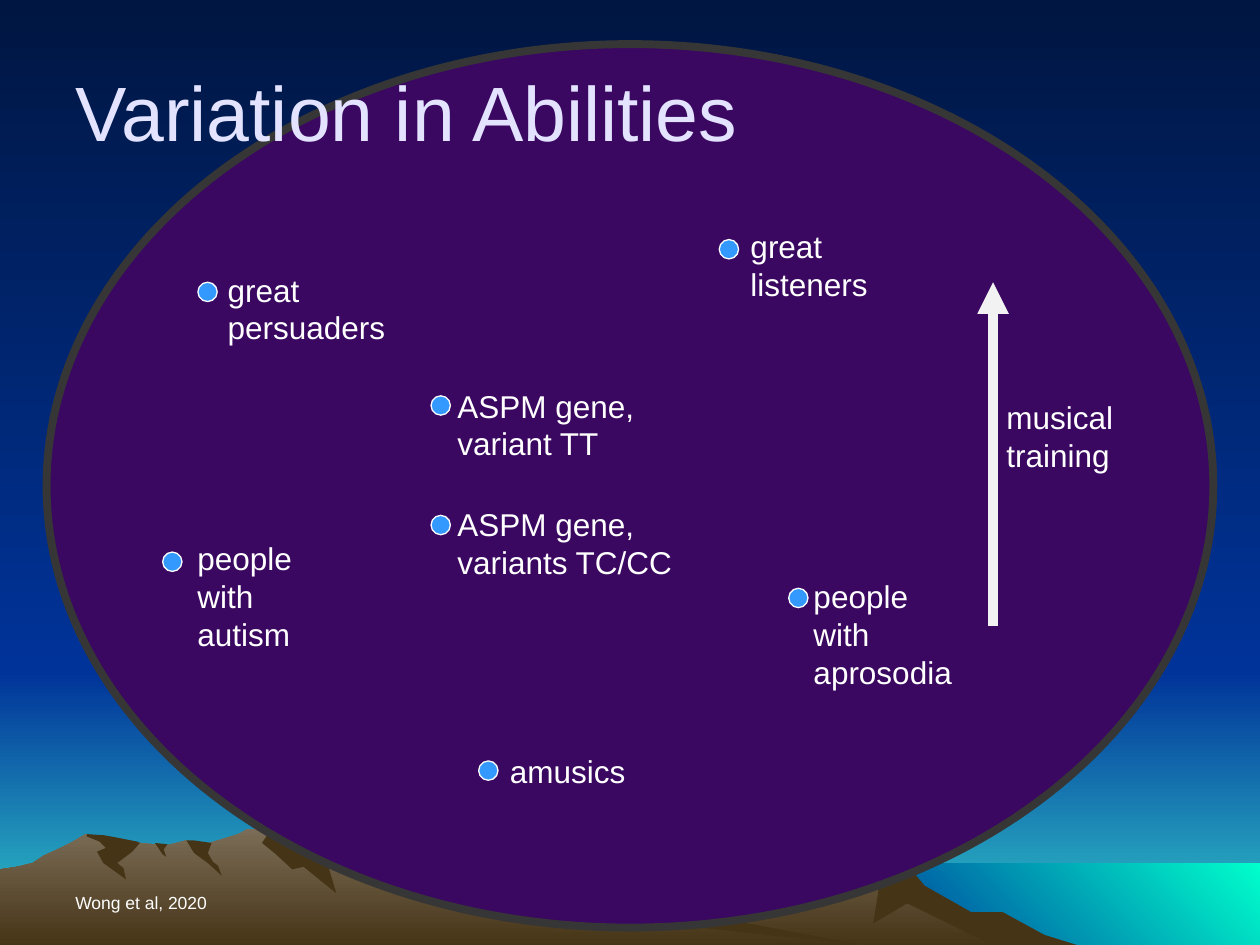
from lxml.etree import SubElement
from pptx import Presentation
from pptx.dml.color import RGBColor
from pptx.enum.shapes import MSO_CONNECTOR, MSO_SHAPE
from pptx.enum.text import MSO_ANCHOR, MSO_AUTO_SIZE, PP_ALIGN
from pptx.oxml.ns import qn
from pptx.util import Cm, Pt

COLORS = {
    "night": "001642", "blue": "003399", "haze": "33CCCC", "aqua": "00FFCC",
    "rock": "7A6C56", "shade": "463416", "oval": "3A0860", "rim": "363636",
    "dot": "3399FF", "text": "FFFFFF", "arrow": "F2F2F2", "title": "E3E3FF",
}
FONT = "Arial"
GRID = Cm(0.0254)
DOT = 0.39

PANELS = [
    ((0, 533, 1000, 750), ("blue", "haze"), 270),
    ((0, 0, 1000, 533), ("night", "blue"), 270),
    ((683, 685, 1000, 752), ("blue", "aqua"), 45),
]
RIDGES = [
    [(802, 740), (778, 727), (764, 723), (723, 698), (702, 671), (685, 660),
     (676, 666), (656, 671), (629, 671), (613, 681), (566, 697), (536, 690),
     (529, 676), (509, 669), (486, 673), (471, 658), (450, 664), (438, 671),
     (424, 672), (394, 685), (355, 698), (327, 709), (277, 739), (258, 751),
     (821, 751)],
    [(690, 751), (667, 748), (432, 712), (354, 665), (331, 663), (327, 668),
     (318, 664), (296, 676), (271, 682), (260, 676), (236, 681), (223, 663),
     (212, 658), (196, 658), (189, 662), (160, 671), (148, 667), (132, 671),
     (111, 669), (94, 671), (68, 662), (56, 669), (46, 674), (35, 679),
     (26, 685), (14, 688), (0, 690), (0, 751)],
]
SHADOWS = [
    [(796, 724), (771, 724), (734, 703), (707, 671), (685, 660), (689, 664),
     (685, 671), (691, 680), (698, 702), (693, 733), (720, 717), (792, 752),
     (858, 751), (829, 742)],
    [(212, 663), (208, 669), (219, 678), (232, 690), (241, 688), (267, 709),
     (261, 689), (271, 682), (260, 674), (245, 668), (232, 663), (213, 659)],
    [(370, 668), (354, 665), (344, 665), (339, 669), (337, 687), (348, 683),
     (353, 688), (363, 691), (374, 712), (407, 727), (472, 727), (690, 751),
     (455, 707), (427, 692), (411, 684), (386, 675)],
    [(154, 667), (168, 669), (165, 677), (169, 684), (173, 687), (176, 695),
     (165, 685), (154, 677), (148, 667)],
    [(133, 670), (130, 674), (132, 680), (129, 678), (123, 669)],
    [(109, 668), (111, 669), (105, 676), (93, 685), (98, 689), (100, 698),
     (82, 685), (77, 676), (84, 673), (79, 668), (69, 664), (69, 662),
     (83, 663), (94, 665)],
]
ABILITIES = [
    (["people with autism"], (3.73, 10.74, 2.97, 2.57), (3.28, 11.13)),
    (["amusics"], (10.03, 15.04, 3.91, 1.02), (9.65, 15.34)),
    (["ASPM gene,", "variant TT"], (8.97, 7.67, 6.25, 1.8), (8.69, 7.98)),
    (["ASPM gene,", "variants TC/CC"], (8.97, 10.06, 6.25, 1.8), (8.69, 10.39)),
    (["people with aprosodia"], (16.15, 11.51, 3.61, 2.57), (15.9, 11.86)),
    (["great", "persuaders"], (4.34, 5.33, 6.25, 1.8), (3.99, 5.69)),
    (["great", "listeners"], (14.88, 4.45, 6.25, 1.8), (14.5, 4.83)),
]


def rgb(name):
    return RGBColor.from_string(COLORS[name])


def fill_solid(fill, name):
    fill.solid()
    fill.fore_color.rgb = rgb(name)


def fill_gradient(fill, names, angle=270):
    fill.gradient()
    fill.gradient_angle = angle
    for stop, name in zip(fill.gradient_stops, names):
        stop.color.rgb = rgb(name)


def add_outline(s, points):
    builder = s.shapes.build_freeform(*points[0], scale=GRID)
    builder.add_line_segments(points[1:], close=True)
    sp = builder.convert_to_shape()
    sp.shadow.inherit = False
    sp.line.fill.background()
    return sp


def add_landscape(s):
    for (x1, y1, x2, y2), names, angle in PANELS:
        sp = add_outline(s, [(x1, y1), (x2, y1), (x2, y2), (x1, y2)])
        fill_gradient(sp.fill, names, angle)
    for points in RIDGES:
        fill_gradient(add_outline(s, points).fill, ("rock", "shade"))
    for points in SHADOWS:
        fill_solid(add_outline(s, points).fill, "shade")


def add_ellipse(s, box, fill, line, width):
    sp = s.shapes.add_shape(MSO_SHAPE.OVAL, *map(Cm, box))
    sp.shadow.inherit = False
    fill_solid(sp.fill, fill)
    sp.line.color.rgb = rgb(line)
    sp.line.width = Pt(width)


def style(p, size, color):
    p.font.name = FONT
    p.font.size = Pt(size)
    p.font.color.rgb = rgb(color)


def add_label(s, lines, box, size=18):
    tf = s.shapes.add_textbox(*map(Cm, box)).text_frame
    tf.word_wrap = True
    tf.text = "\n".join(lines)
    for p in tf.paragraphs:
        style(p, size, "text")


def add_arrow(s, x, start, end):
    cxn = s.shapes.add_connector(
        MSO_CONNECTOR.STRAIGHT, Cm(x), Cm(start), Cm(x), Cm(end))
    cxn.line.color.rgb = rgb("arrow")
    cxn.line.width = Pt(6)
    SubElement(cxn.line._get_or_add_ln(), qn("a:tailEnd"), type="triangle")
    SubElement(cxn._element.spPr, qn("a:effectLst"))


def set_title(s, text):
    title = s.shapes.title
    title.left, title.top, title.width, title.height = map(
        Cm, (1.27, 0.64, 22.86, 3.18))
    tf = title.text_frame
    tf.text = text
    tf.auto_size = MSO_AUTO_SIZE.NONE
    tf.vertical_anchor = MSO_ANCHOR.MIDDLE
    p = tf.paragraphs[0]
    p.alignment = PP_ALIGN.LEFT
    style(p, 44, "title")
    s.shapes._spTree.append(title._element)


def main():
    prs = Presentation()
    prs.slide_width, prs.slide_height = Cm(25.4), Cm(19.05)
    s = prs.slides.add_slide(prs.slide_layouts[5])
    fill_gradient(s.background.fill, ("night", "blue"))
    add_landscape(s)
    add_ellipse(s, (0.94, 0.89, 23.52, 17.81), "oval", "rim", 4.5)
    for lines, box, dot in ABILITIES:
        add_label(s, lines, box)
        add_ellipse(s, (*dot, DOT, DOT), "dot", "text", 0.75)
    add_label(s, ["musical", "training"], (20.04, 7.9, 6.25, 1.8))
    add_arrow(s, 20.02, 12.62, 5.69)
    set_title(s, "Variation in Abilities")
    add_label(s, ["Wong et al, 2020"], (1.27, 17.86, 9.32, 0.69), 10)
    prs.save("out.pptx")


if __name__ == "__main__":
    main()
